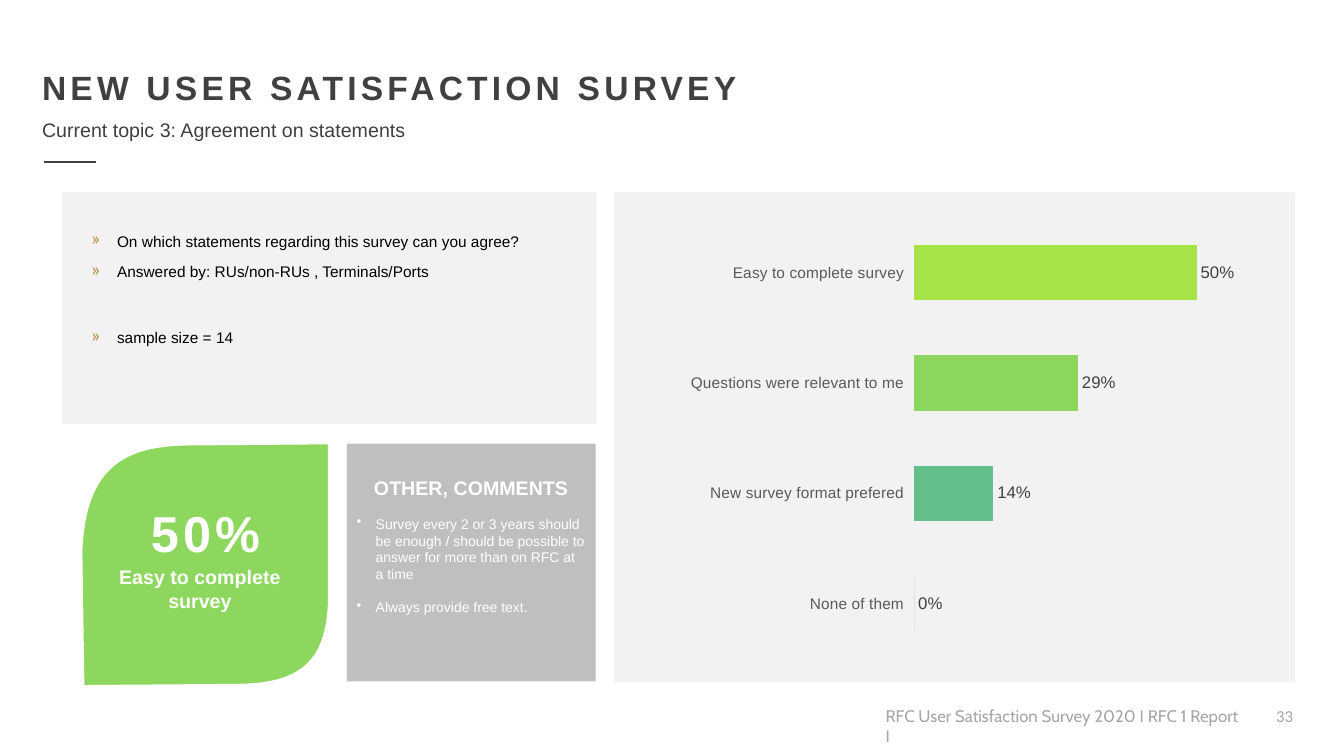
from lxml import etree
from pptx import Presentation
from pptx.chart.data import CategoryChartData
from pptx.dml.color import RGBColor
from pptx.enum.chart import XL_CHART_TYPE, XL_LABEL_POSITION, XL_TICK_MARK
from pptx.enum.shapes import MSO_CONNECTOR, MSO_SHAPE
from pptx.enum.text import PP_ALIGN
from pptx.oxml import parse_xml
from pptx.oxml.ns import nsdecls, qn
from pptx.util import Cm, Pt

BAR = XL_CHART_TYPE.BAR_CLUSTERED
OUT_END = XL_LABEL_POSITION.OUTSIDE_END
TICK_OUT, TICK_NONE = XL_TICK_MARK.OUTSIDE, XL_TICK_MARK.NONE
RECT, LINE = MSO_SHAPE.RECTANGLE, MSO_CONNECTOR.STRAIGHT
MID, RIGHT = PP_ALIGN.CENTER, PP_ALIGN.RIGHT

COLORS = {
    "white": "FFFFFF", "black": "000000", "dark": "404040", "label": "595959",
    "foot": "A6A6A6", "panel": "F2F2F2", "note": "BFBFBF", "gold": "BF873D",
    "leaf": "8DD75F", "navy": "0B2659",
}
BARS = [
    ("Easy to complete survey", 0.5, "A5E348"),
    ("Questions were relevant to me", 0.29, "8DD75F"),
    ("New survey format prefered", 0.14, "63C08C"),
    ("None of them", 0, "37A7B5"),
]


def rgb(name):
    return RGBColor.from_string(COLORS.get(name, name))


def put(item, vals):
    for key, val in vals.items():
        setattr(item, key, val)


def style(font, size, color, face="Arial", bold=False):
    put(font, {"size": Pt(size), "name": face, "bold": bold})
    font.color.rgb = rgb(color)


def paint(shape, fill):
    shape.shadow.inherit = False
    shape.fill.solid()
    shape.fill.fore_color.rgb = rgb(fill)
    shape.line.fill.background()


def block(slide, box, fill):
    paint(slide.shapes.add_shape(RECT, *map(Cm, box)), fill)


def bullet(para, mark, indent, color=None):
    props = para._p.get_or_add_pPr()
    put_in = {"marL": indent, "indent": -indent}
    for key, val in put_in.items():
        props.set(key, str(int(val)))
    if color:
        tone = etree.SubElement(props, qn("a:buClr"))
        etree.SubElement(tone, qn("a:srgbClr")).set("val", COLORS[color])
    etree.SubElement(props, qn("a:buChar")).set("char", mark)


def text(slide, box, lines, size, color, face="Arial", bold=False,
         wrap=True, track=0, form=None):
    frame = slide.shapes.add_textbox(*map(Cm, box)).text_frame
    frame.word_wrap = wrap
    for i, line in enumerate(lines):
        para = frame.paragraphs[0] if i == 0 else frame.add_paragraph()
        put(para, form or {})
        run = para.add_run()
        run.text = line
        style(run.font, size, color, face, bold)
        if track:
            run._r.get_or_add_rPr().set("spc", str(track * 100))
    return frame


def header(slide, box):
    x, y, w, h = box
    text(slide, (x, y, w, 1.27), ["NEW USER SATISFACTION SURVEY"],
         24, "dark", bold=True, track=3)
    text(slide, (x, y + 1.29, 9.7, 0.86),
         ["Current topic 3: Agreement on statements"], 14, "dark", wrap=False)
    rule = slide.shapes.add_connector(
        LINE, Cm(x + 0.31), Cm(y + h), Cm(x + 1.61), Cm(y + h))
    rule.line.color.rgb = rgb("dark")
    rule.line.width = Pt(1.5)
    etree.SubElement(rule._element.spPr, qn("a:effectLst"))


def facts(slide, box):
    x, y, w, h = box
    block(slide, box, "panel")
    groups = [
        (0.92, ["On which statements regarding this survey can you agree?",
                "Answered by: RUs/non-RUs , Terminals/Ports"]),
        (3.35, ["sample size = 14"]),
    ]
    for top, lines in groups:
        frame = text(slide, (x + 0.49, y + top, w - 0.9, len(lines)), lines,
                     11, "black", form={"line_spacing": 0.9})
        for i, para in enumerate(frame.paragraphs):
            para.space_before = Pt(10 if i else 0)
            bullet(para, "»", Cm(0.64), "gold")


def curve(a, b, c, d, steps=24):
    for i in range(1, steps + 1):
        t = i / steps
        u = 1 - t
        yield tuple(u**3 * p + 3 * u * u * t * q + 3 * u * t * t * r + t**3 * s
                    for p, q, r, s in zip(a, b, c, d))


def leaf(slide, box):
    x, y, w, h = box
    side, edge = (0, 2.72), (w, 4.06)
    points = [side, *curve(side, (0.08, 0.61), (1.04, 0.05), (2.67, 0.03)),
              (w, 0), edge,
              *curve(edge, (6.15, 5.51), (5.49, 6.05), (3.96, 6.07))]
    spots = [(Cm(x + p), Cm(y + q)) for p, q in points]
    pen = slide.shapes.build_freeform(Cm(x + 0.05), Cm(y + h))
    pen.add_line_segments(spots, close=True)
    shape = pen.convert_to_shape()
    paint(shape, "leaf")
    shape.line.color.rgb = rgb("white")
    shape.line.width = Pt(1)
    look = {"bold": True, "wrap": False, "form": {"alignment": MID}}
    text(slide, (x + 1.42, y + 1.34, 3.4, 1.8), ["50%"], 36, "white",
         track=3, **look)
    text(slide, (x + 0.68, y + 2.94, 4.6, 1.45),
         ["Easy to complete", "survey"], 14, "white", **look)


def notes(slide, box):
    x, y, w, h = box
    block(slide, box, "note")
    lines = ["OTHER, COMMENTS",
             "Survey every 2 or 3 years should be enough / should be possible "
             "to answer for more than on RFC at a time",
             "Always provide free text."]
    frame = text(slide, (x, y + 0.68, w, 4.27), lines, 10, "white")
    head, *items = frame.paragraphs
    head.alignment = MID
    style(head.runs[0].font, 14, "white", bold=True)
    for item in items:
        item.space_before = Pt(11.5)
        bullet(item, "•", Cm(0.48))


def graph(slide, box):
    x, y, w, h = box
    block(slide, box, "panel")
    data = CategoryChartData(number_format="0%")
    data.categories = [name for name, _, _ in BARS]
    data.add_series("Series 1", [val for _, val, _ in BARS])
    area = (x + 0.61, y + 0.28, w - 1.35, h - 0.4)
    chart = slide.shapes.add_chart(BAR, *map(Cm, area), data).chart
    put(chart, {"has_legend": False, "has_title": False})
    style(chart.font, 10, "black")

    # Axes
    cat, val = chart.category_axis, chart.value_axis
    put(cat, {"reverse_order": True, "major_tick_mark": TICK_OUT,
              "minor_tick_mark": TICK_NONE, "has_major_gridlines": False})
    style(cat.tick_labels.font, 11, "label")
    cat.format.line.fill.background()
    put(val, {"visible": False, "has_major_gridlines": False,
              "minimum_scale": 0, "maximum_scale": 0.6})

    # Bars and labels
    plot = chart.plots[0]
    put(plot, {"gap_width": 100, "vary_by_categories": False,
               "has_data_labels": True})
    labels = plot.data_labels
    put(labels, {"show_value": True, "position": OUT_END,
                 "number_format": "0%", "number_format_is_linked": False})
    style(labels.font, 12, "dark")
    row = plot.series[0]
    row.format.fill.solid()
    row.format.fill.fore_color.rgb = rgb("navy")
    for i, (_, _, tone) in enumerate(BARS):
        fill = row.points[i].format.fill
        fill.solid()
        fill.fore_color.rgb = rgb(tone)

    # Plot area
    root = plot._element.getparent()
    for old in root.findall(qn("c:layout")):
        root.remove(old)
    sizes = {"x": 0.44, "y": 0.03, "w": 0.54, "h": 0.93}
    parts = '<c:layoutTarget val="inner"/>'
    parts += '<c:xMode val="edge"/><c:yMode val="edge"/>'
    parts += "".join(f'<c:{k} val="{v}"/>' for k, v in sizes.items())
    root.insert(0, parse_xml(f'<c:layout {nsdecls("c")}><c:manualLayout>'
                             f'{parts}</c:manualLayout></c:layout>'))


def footer(slide, box):
    x, y, w, h = box
    text(slide, (x, y, 9.58, 0.76),
         ["RFC User Satisfaction Survey 2020 I RFC 1 Report I"],
         12, "foot", "Cabin")
    text(slide, (x + w - 1.57, y, 1.57, h), ["33"], 12, "foot", "Calibri",
         form={"alignment": RIGHT})


def main():
    deck = Presentation()
    put(deck, {"slide_width": Cm(33.87), "slide_height": Cm(19.05)})
    slide = deck.slides.add_slide(deck.slide_layouts[6])
    footer(slide, (22.07, 17.65, 10.77, 1.02))
    facts(slide, (1.57, 4.85, 13.46, 5.84))
    graph(slide, (15.47, 4.85, 17.17, 12.34))
    leaf(slide, (2.06, 11.18, 6.22, 6.1))
    notes(slide, (8.74, 11.18, 6.27, 5.99))
    header(slide, (0.81, 1.55, 30.76, 2.54))
    deck.save("out.pptx")


if __name__ == "__main__":
    main()
